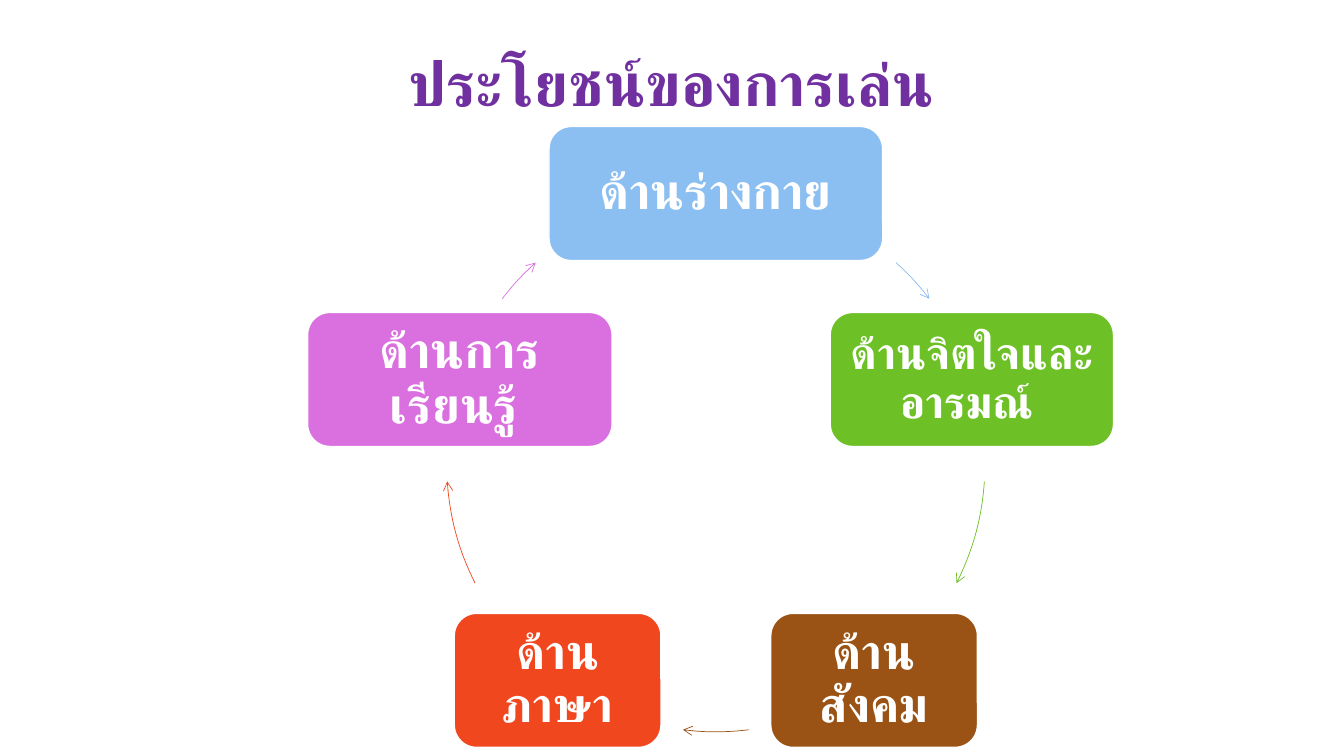
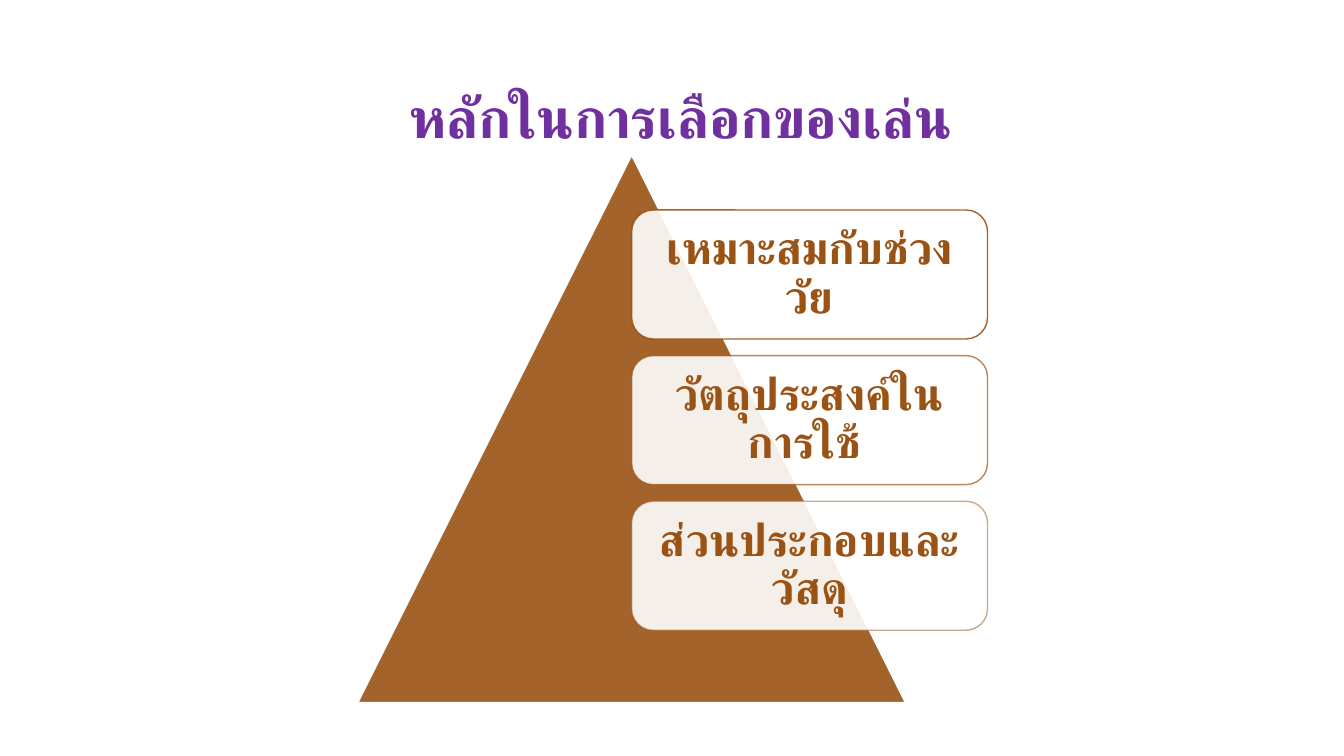
"""Build two slides: a cycle of the benefits of play and a pyramid list on choosing toys."""
from math import cos, radians, sin

from lxml.etree import SubElement
from pptx import Presentation
from pptx.dml.color import RGBColor
from pptx.enum.lang import MSO_LANGUAGE_ID as LANG
from pptx.enum.shapes import MSO_SHAPE as SHAPE
from pptx.enum.text import MSO_ANCHOR as ANCHOR, PP_ALIGN as ALIGN
from pptx.oxml.ns import qn
from pptx.util import Inches, Pt

COLORS = {"title": "7030A0", "white": "FFFFFF", "blue": "8BBEF1", "green": "6DC025",
          "brown": "9A5315", "red": "F1471F", "pink": "DA6FDF"}
FONT = "Calibri"
SLIDE_W, SLIDE_H = 13.33, 7.5

CENTER_X, CENTER_Y, RADIUS = 7.1, 4.59, 2.67
NODE_H = 1.33
NODES = [
    ("ด้านร่างกาย", "blue", 3.31, 36, 0.15, (312, 322.5)),
    ("ด้านจิตใจและอารมณ์ ", "green", 2.81, 32, 0.13, (4, 26.6)),
    ("ด้านสังคม", "brown", 2.05, 35, 0.15, (83, 97)),
    ("ด้านภาษา", "red", 2.05, 35, 0.15, (153.4, 176)),
    ("ด้านการเรียนรู้ ", "pink", 3.02, 36, 0.15, (217.5, 228)),
]

PYRAMID_X, PYRAMID_Y, PYRAMID_SIZE = 3.55, 1.54, 5.43
CARD_H, CARD_PITCH = 1.28, 1.445
CARDS = [("เหมาะสมกับช่วงวัย", 90), ("วัตถุประสงค์ในการใช้ ", 70), ("ส่วนประกอบและวัสดุ", 50)]


def paint(fill, color, alpha=100):
    """Give a fill a solid colour with an opacity in percent."""
    fill.solid()
    fill.fore_color.rgb = RGBColor.from_string(COLORS[color])
    if alpha < 100:
        clr = fill._xPr.find(qn("a:solidFill"))[0]
        SubElement(clr, qn("a:alpha"), val=str(alpha * 1000))


def write(sp, text, size, color, inset=0.1, anchor=ANCHOR.MIDDLE):
    """Write one bold centred paragraph into a shape."""
    tf = sp.text_frame
    tf.word_wrap = True
    tf.vertical_anchor = anchor
    tf.margin_left = tf.margin_right = tf.margin_top = tf.margin_bottom = Inches(inset)
    p = tf.paragraphs[0]
    p.alignment = ALIGN.CENTER
    p.line_spacing = 0.9
    r = p.add_run()
    r.text = text
    r.font.size = Pt(size)
    r.font.bold = True
    r.font.name = FONT
    r.font.language_id = LANG.THAI
    paint(r.font.fill, color)
    SubElement(r.font._element, qn("a:cs"), typeface=FONT)


def add_title(slide, text, size, x, y, height):
    """Add a bottom-anchored slide title."""
    sp = slide.shapes.add_textbox(Inches(x), Inches(y), Inches(11), Inches(height))
    write(sp, text, size, "title", 0.05, ANCHOR.BOTTOM)


def add_figure(slide, kind, box, fill, line, fill_alpha=100, line_alpha=100):
    """Add a filled and outlined preset shape."""
    sp = slide.shapes.add_shape(kind, *map(Inches, box))
    sp.shadow.inherit = False
    paint(sp.fill, fill, fill_alpha)
    sp.line.width = Pt(1)
    paint(sp.line.fill, line, line_alpha)
    return sp


def add_arc_arrow(slide, color, angles):
    """Add an arc of the cycle's circle with an arrowhead at its end."""
    box = (CENTER_X - RADIUS, CENTER_Y - RADIUS, 2 * RADIUS, 2 * RADIUS)
    sp = slide.shapes.add_shape(SHAPE.ARC, *map(Inches, box))
    sp.shadow.inherit = False
    for i, angle in enumerate(angles):
        sp.adjustments[i] = angle * 0.6
    sp.fill.background()
    sp.line.width = Pt(0.5)
    paint(sp.line.fill, color)
    SubElement(sp.line._get_or_add_ln(), qn("a:tailEnd"), type="arrow")


def add_cycle(slide):
    """Spread the nodes evenly round the circle, each followed by its arrow."""
    for i, (text, color, width, size, inset, angles) in enumerate(NODES):
        turn = radians(360 / len(NODES) * i - 90)
        x = CENTER_X + RADIUS * cos(turn) - width / 2
        y = CENTER_Y + RADIUS * sin(turn) - NODE_H / 2
        sp = add_figure(slide, SHAPE.ROUNDED_RECTANGLE, (x, y, width, NODE_H), color, "white")
        write(sp, text, size, "white", inset)
        add_arc_arrow(slide, color, angles)


def add_pyramid(slide):
    """Add the triangle and the cards that start from its centre line."""
    box = (PYRAMID_X, PYRAMID_Y, PYRAMID_SIZE, PYRAMID_SIZE)
    add_figure(slide, SHAPE.ISOSCELES_TRIANGLE, box, "brown", "white", 90)
    x, top = PYRAMID_X + PYRAMID_SIZE / 2, PYRAMID_Y + PYRAMID_SIZE / 10
    for i, (text, line_alpha) in enumerate(CARDS):
        box = (x, top + i * CARD_PITCH, PYRAMID_SIZE * 0.65, CARD_H)
        sp = add_figure(slide, SHAPE.ROUNDED_RECTANGLE, box, "white", "brown", 90, line_alpha)
        write(sp, text, 32, "brown", 0.13)


def main():
    """Build and save the presentation."""
    prs = Presentation()
    prs.slide_width, prs.slide_height = Inches(SLIDE_W), Inches(SLIDE_H)
    blank = prs.slide_layouts[6]

    s = prs.slides.add_slide(blank)
    add_title(s, "ประโยชน์ของการเล่น", 44, 1.16, 0.33, 0.91)
    add_cycle(s)

    s = prs.slides.add_slide(blank)
    add_title(s, "หลักในการเลือกของเล่น", 40, 1.25, 0.84, 0.7)
    add_pyramid(s)

    prs.save("out.pptx")


if __name__ == "__main__":
    main()
